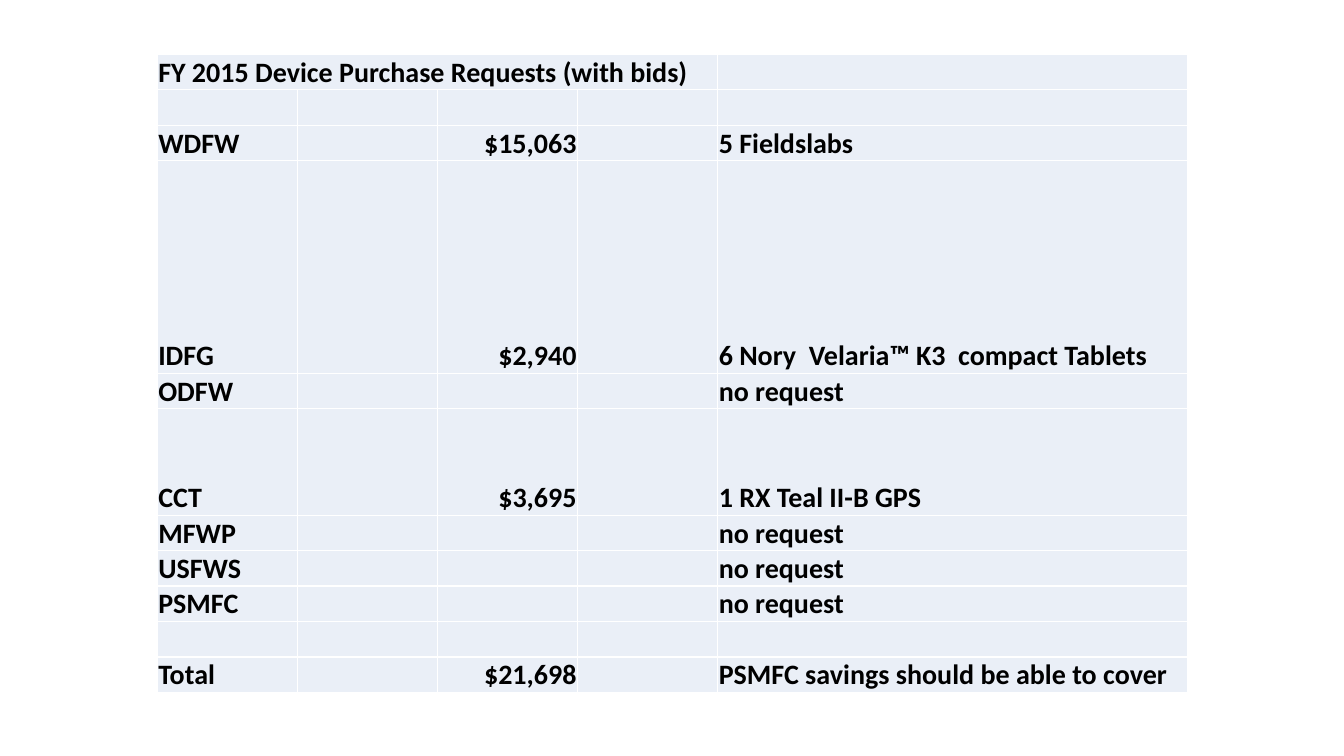
import pptx
import pptx.util
import pptx.dml.color
import pptx.enum.text

Inches = pptx.util.Inches
PALE = pptx.dml.color.RGBColor(0xEA, 0xEF, 0xF7)
BLACK = pptx.dml.color.RGBColor(0, 0, 0)

# Agency, cost, request, and row height in text lines
ROWS = [
    ("FY 2015 Device Purchase Requests (with bids)", "", "", 1),
    ("", "", "", 1),
    ("WDFW", "$15,063", "5 Fieldslabs", 1),
    ("IDFG", "$2,940", "6 Nory  Velaria™ K3  compact Tablets", 6),
    ("ODFW", "", "no request", 1),
    ("CCT", "$3,695", "1 RX Teal II-B GPS", 3),
    ("MFWP", "", "no request", 1),
    ("USFWS", "", "no request", 1),
    ("PSMFC", "", "no request", 1),
    ("", "", "", 1),
    ("Total", "$21,698", "PSMFC savings should be able to cover", 1),
]
WIDTHS = [1.39, 1.39, 1.39, 1.39, 4.66]
HEIGHT = 6.33
COST = 2

deck = pptx.Presentation()
deck.slide_width = Inches(13.33)
deck.slide_height = Inches(7.5)
slide = deck.slides.add_slide(deck.slide_layouts[6])

frame = slide.shapes.add_table(
    len(ROWS), len(WIDTHS),
    Inches(1.56), Inches(0.54), Inches(sum(WIDTHS)), Inches(HEIGHT))
table = frame.table
table.first_row = False
table.horz_banding = False
for column, width in zip(table.columns, WIDTHS):
    column.width = Inches(width)

line = HEIGHT / sum(row[-1] for row in ROWS)
for r, (agency, cost, request, lines) in enumerate(ROWS):
    table.rows[r].height = Inches(line * lines)
    for c, text in enumerate([agency, "", cost, "", request]):
        cell = table.cell(r, c)
        cell.fill.solid()
        cell.fill.fore_color.rgb = PALE
        cell.vertical_anchor = pptx.enum.text.MSO_ANCHOR.BOTTOM
        cell.margin_left = cell.margin_right = cell.margin_top = Inches(0.01)
        cell.margin_bottom = 0
        if not text:
            continue
        para = cell.text_frame.paragraphs[0]
        if c == COST:
            para.alignment = pptx.enum.text.PP_ALIGN.RIGHT
        run = para.add_run()
        run.text = text
        run.font.name = "Calibri"
        run.font.size = pptx.util.Pt(20)
        run.font.bold = True
        run.font.color.rgb = BLACK

table.cell(0, 0).merge(table.cell(0, 3))

deck.save("out.pptx")
